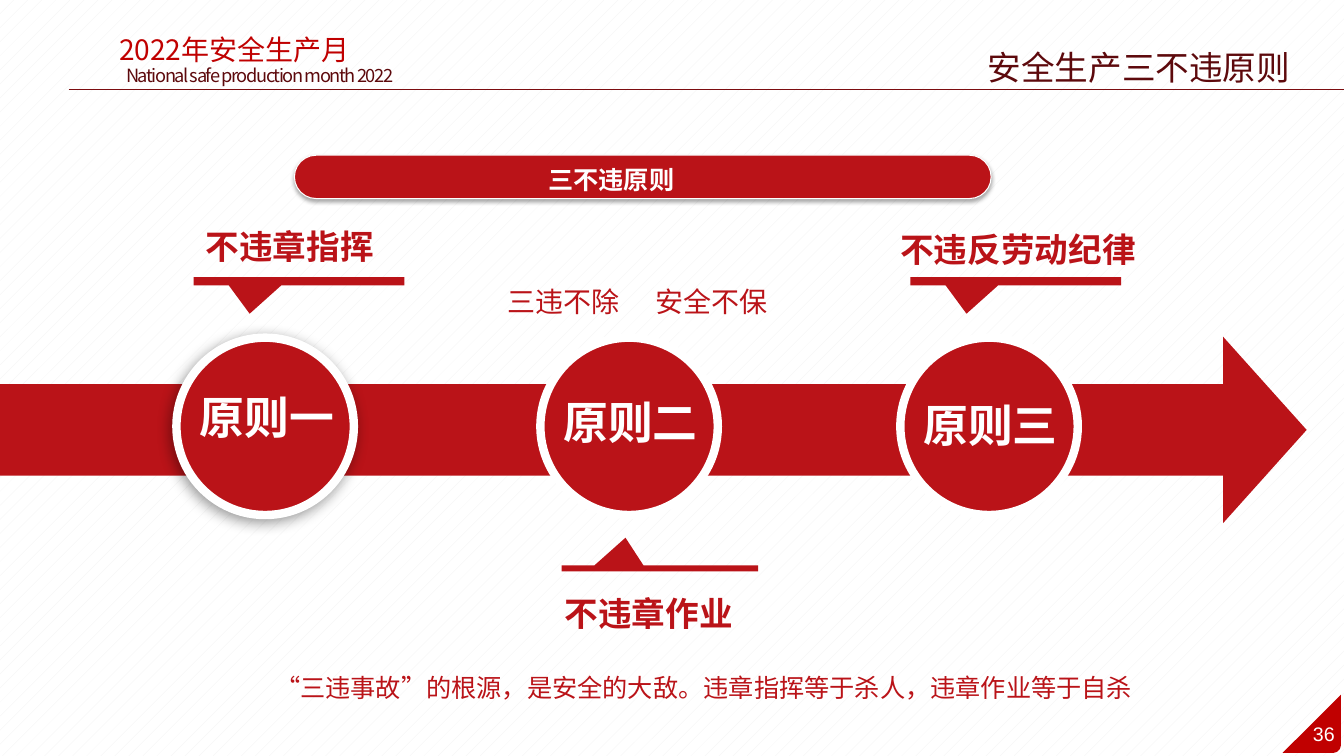
from dataclasses import dataclass

from lxml import etree
from pptx import Presentation
from pptx.dml.color import RGBColor
from pptx.enum.dml import MSO_PATTERN
from pptx.enum.shapes import MSO_CONNECTOR, MSO_SHAPE
from pptx.enum.text import MSO_ANCHOR, MSO_AUTO_SIZE, PP_ALIGN
from pptx.oxml.ns import qn
from pptx.shapes.autoshape import Shape
from pptx.slide import Slide
from pptx.util import Emu, Pt

PX = 9144
LEFT, CENTER = PP_ALIGN.LEFT, PP_ALIGN.CENTER
TOP, MIDDLE = MSO_ANCHOR.TOP, MSO_ANCHOR.MIDDLE
GROW, FIXED = MSO_AUTO_SIZE.SHAPE_TO_FIT_TEXT, MSO_AUTO_SIZE.NONE
ARROW, ELLIPSE = MSO_SHAPE.RIGHT_ARROW, MSO_SHAPE.OVAL
CALLOUT, PILL = MSO_SHAPE.RECTANGULAR_CALLOUT, MSO_SHAPE.ROUNDED_RECTANGLE
STRAIGHT, DOTS = MSO_CONNECTOR.STRAIGHT, MSO_PATTERN.PERCENT_5


@dataclass(frozen=True)
class Theme:
    red: str = "BA1318"
    bright: str = "C00000"
    dark: str = "5D090C"
    rule: str = "7C0D10"
    white: str = "FFFFFF"
    dots: str = "F2F2F2"
    black: str = "000000"
    font: str = "Noto Sans CJK SC"
    number_font: str = "Arial"
    circle_size: int = 32
    heading_size: int = 24
    header_size: int = 20
    body_size: int = 18
    number_size: int = 14
    small_size: int = 13


THEME = Theme()


@dataclass(frozen=True)
class Box:
    left: int
    top: int
    width: int
    height: int


@dataclass(frozen=True)
class Shadow:
    alpha: int
    blur: float
    distance: float
    angle: int


@dataclass(frozen=True)
class Label:
    text: str
    box: Box
    size: int
    color: str = THEME.red
    bold: bool = False
    align: PP_ALIGN = LEFT
    anchor: MSO_ANCHOR = TOP
    spacing: float = 1.0
    inset: tuple[int, int] = (10, 5)
    wrap: bool = True
    auto_size: MSO_AUTO_SIZE = GROW
    font: str = THEME.font
    tracking: int = 0
    tab: int = 0


@dataclass(frozen=True)
class Principle:
    name: str
    left: int
    label_top: int
    shadow: Shadow | None = None


@dataclass(frozen=True)
class Rule:
    text: str
    text_box: Box
    bar: Box
    pointer: tuple[float, float]


PRINCIPLES = [
    Principle("原则二", 536, 387),
    Principle("原则三", 893, 390),
    Principle("原则一", 175, 382, Shadow(40, 10, 3, 135)),
]
RULES = [
    Rule("不违章作业", Box(548, 574, 409, 57), Box(557, 561, 195, 6), (-0.175, -5.095)),
    Rule("不违章指挥", Box(192, 210, 369, 57), Box(192, 275, 209, 8), (-0.234, 4.033)),
    Rule("不违反劳动纪律", Box(881, 213, 302, 57), Box(903, 275, 209, 8), (-0.234, 4.033)),
]
HEADER = [
    Label("36", Box(1291, 711, 44, 34), THEME.number_size, THEME.white,
          align=CENTER, wrap=False, font=THEME.number_font),
    Label("2022年安全生产月", Box(61, 27, 343, 44), THEME.header_size,
          THEME.bright, align=CENTER),
    Label("National safe production month 2022", Box(110, 59, 295, 32),
          THEME.small_size, THEME.dark, align=CENTER, wrap=False, tracking=-100),
    Label("安全生产三不违原则", Box(730, 42, 799, 50), THEME.heading_size,
          THEME.dark, align=CENTER),
]
BANNER = Label("三不违原则", Box(534, 151, 577, 48), THEME.body_size, THEME.white,
               bold=True, anchor=MIDDLE, spacing=1.2, auto_size=FIXED)
CLOSING = [
    Label("“三违事故”的根源，是安全的大敌。违章指挥等于杀人，违章作业等于自杀",
          Box(263, 652, 1049, 47), THEME.body_size, spacing=1.35),
    Label("三违不除\t安全不保", Box(490, 275, 312, 47), THEME.header_size,
          inset=(13, 7), tab=147),
]
CORNER = [(1330, 689), (1330, 739), (1329, 743), (1326, 746), (1322, 747), (1272, 747)]


def px(length: int) -> Emu:
    return Emu(length * PX)


def rgb(color: str) -> RGBColor:
    return RGBColor.from_string(color)


def frame(box: Box) -> tuple[Emu, Emu, Emu, Emu]:
    return px(box.left), px(box.top), px(box.width), px(box.height)


def paint(shape: Shape, color: str, outline: float = 0) -> None:
    shape.shadow.inherit = False
    shape.fill.solid()
    shape.fill.fore_color.rgb = rgb(color)
    if outline:
        shape.line.color.rgb = rgb(THEME.white)
        shape.line.width = Pt(outline)
    else:
        shape.line.fill.background()


def add_shadow(shape: Shape, shadow: Shadow) -> None:
    effects = shape._element.spPr.find(qn("a:effectLst"))
    outer = etree.SubElement(
        effects, qn("a:outerShdw"), blurRad=str(Pt(shadow.blur)),
        dist=str(Pt(shadow.distance)), dir=str(shadow.angle * 60000),
        algn="ctr", rotWithShape="0")
    color = etree.SubElement(outer, qn("a:srgbClr"), val=THEME.black)
    etree.SubElement(color, qn("a:alpha"), val=str(shadow.alpha * 1000))


def add_preset(slide: Slide, kind: MSO_SHAPE, box: Box,
               adjustments: tuple[float, ...] = (), outline: float = 0,
               shadow: Shadow | None = None) -> None:
    shape = slide.shapes.add_shape(kind, *frame(box))
    for index, value in enumerate(adjustments):
        shape.adjustments[index] = value
    paint(shape, THEME.red, outline)
    if shadow:
        add_shadow(shape, shadow)


def add_label(slide: Slide, label: Label) -> None:
    text_frame = slide.shapes.add_textbox(*frame(label.box)).text_frame
    text_frame.text = label.text
    text_frame.word_wrap = label.wrap
    text_frame.auto_size = label.auto_size
    text_frame.vertical_anchor = label.anchor
    text_frame.margin_left = text_frame.margin_right = px(label.inset[0])
    text_frame.margin_top = text_frame.margin_bottom = px(label.inset[1])
    paragraph = text_frame.paragraphs[0]
    paragraph.alignment = label.align
    paragraph.line_spacing = label.spacing
    if label.tab:
        tabs = etree.SubElement(paragraph._p.get_or_add_pPr(), qn("a:tabLst"))
        etree.SubElement(tabs, qn("a:tab"), pos=str(px(label.tab)), algn="l")
    for run in paragraph.runs:
        run.font.size = Pt(label.size)
        run.font.bold = label.bold
        run.font.name = label.font
        run.font.color.rgb = rgb(label.color)
        properties = run._r.get_or_add_rPr()
        etree.SubElement(properties, qn("a:ea"), typeface=label.font)
        if label.tracking:
            properties.set("spc", str(label.tracking))


def add_header(slide: Slide) -> None:
    line = slide.shapes.add_connector(STRAIGHT, px(68), px(89), px(1333), px(89))
    line.line.color.rgb = rgb(THEME.rule)
    line.line.width = Pt(0.75)
    etree.SubElement(line._element.spPr, qn("a:effectLst"))
    builder = slide.shapes.build_freeform(*CORNER[0], scale=PX)
    builder.add_line_segments(CORNER[1:], close=True)
    paint(builder.convert_to_shape(), THEME.bright)
    for label in HEADER:
        add_label(slide, label)


def add_principle(slide: Slide, principle: Principle) -> None:
    add_preset(slide, ELLIPSE, Box(principle.left, 335, 176, 176), outline=6,
               shadow=principle.shadow)
    add_label(slide, Label(
        principle.name, Box(principle.left - 23, principle.label_top, 225, 72),
        THEME.circle_size, THEME.white, bold=True, align=CENTER, auto_size=FIXED))


def add_rule(slide: Slide, rule: Rule) -> None:
    add_preset(slide, CALLOUT, rule.bar, rule.pointer)
    add_label(slide, Label(rule.text, rule.text_box, THEME.heading_size,
                           bold=True, spacing=1.2, inset=(12, 6)))


def main() -> None:
    presentation = Presentation()
    presentation.slide_width, presentation.slide_height = px(1333), px(750)
    slide = presentation.slides.add_slide(presentation.slide_layouts[6])
    background = slide.background.fill
    background.patterned()
    background.pattern = DOTS
    background.fore_color.rgb = rgb(THEME.dots)
    background.back_color.rgb = rgb(THEME.white)
    add_header(slide)
    add_preset(slide, ARROW, Box(0, 334, 1296, 185), (0.491, 0.448))
    for principle in PRINCIPLES:
        add_principle(slide, principle)
    for rule in RULES:
        add_rule(slide, rule)
    add_preset(slide, PILL, Box(292, 154, 691, 43), (0.5,), outline=0.75,
               shadow=Shadow(35, 3.1, 1.8, 90))
    for label in [BANNER, *CLOSING]:
        add_label(slide, label)
    presentation.save("out.pptx")


if __name__ == "__main__":
    main()
